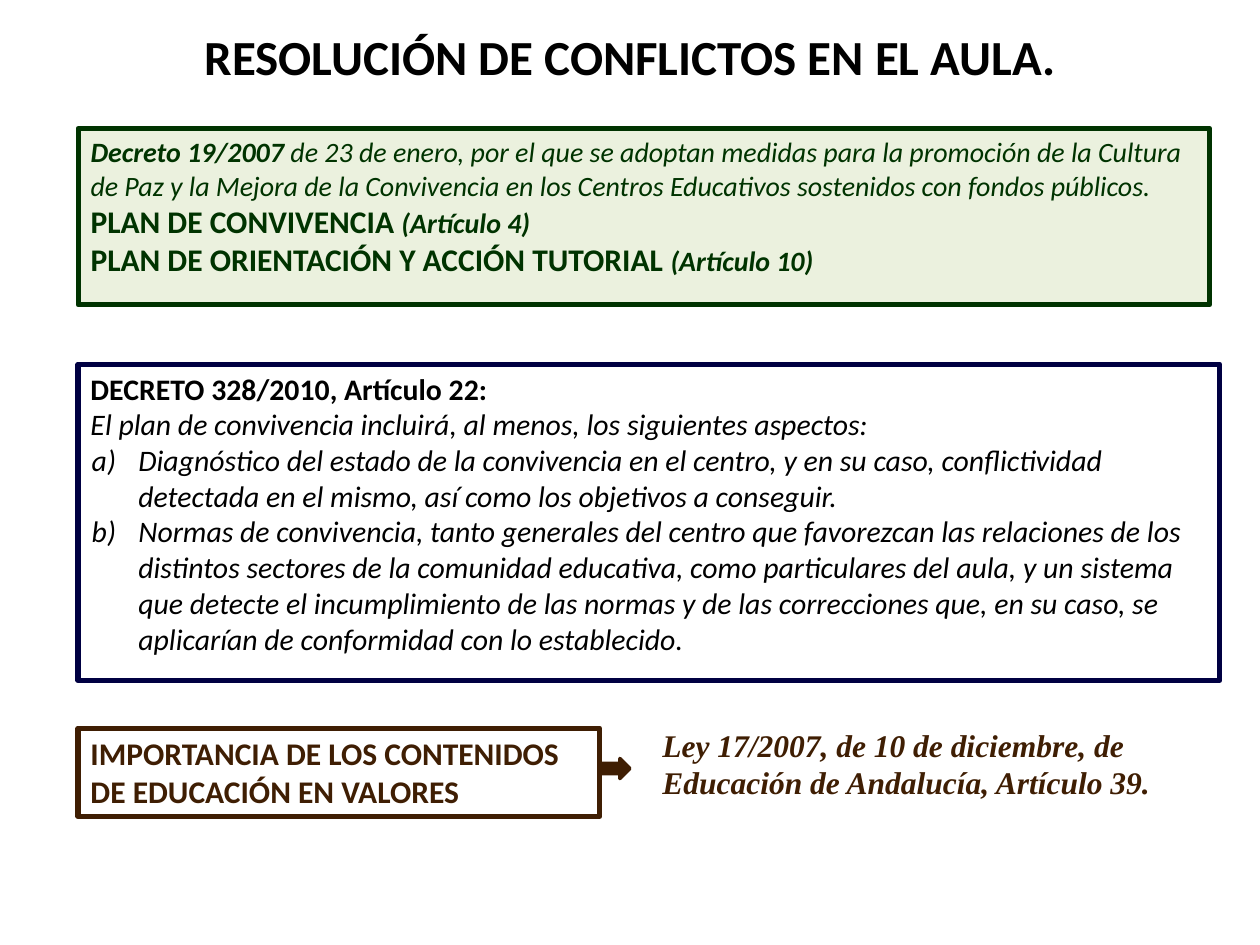
from lxml import etree
from pptx import Presentation
from pptx.dml.color import RGBColor
from pptx.enum.shapes import MSO_SHAPE
from pptx.enum.text import MSO_ANCHOR, PP_ALIGN
from pptx.oxml.ns import qn
from pptx.util import Inches, Pt

RECT, ARROW = MSO_SHAPE.RECTANGLE, MSO_SHAPE.RIGHT_ARROW
TOP, MIDDLE = MSO_ANCHOR.TOP, MSO_ANCHOR.MIDDLE
LEFT, CENTER = PP_ALIGN.LEFT, PP_ALIGN.CENTER

BLACK = RGBColor(0x00, 0x00, 0x00)
NAVY = RGBColor(0x00, 0x00, 0x42)
GREEN = RGBColor(0x00, 0x33, 0x00)
PALE = RGBColor(0xEB, 0xF1, 0xDE)
BROWN = RGBColor(0x3F, 0x1E, 0x03)

EDGE = 0.62
BOLD, ITALIC = {"bold": True}, {"italic": True}
BOTH = {**BOLD, **ITALIC}


def inches(box):
    return [Inches(n) for n in box]


def write(shape, paras, color, size, align=LEFT, anchor=TOP, face="Calibri"):
    """Fill a shape with paragraphs, each a list of (text, format) runs."""
    frame = shape.text_frame
    frame.word_wrap = True
    frame.vertical_anchor = anchor
    for i, runs in enumerate(paras):
        para = frame.add_paragraph() if i else frame.paragraphs[0]
        para.alignment = align
        for text, form in runs:
            run = para.add_run()
            run.text = text
            run.font.color.rgb = color
            look = {"name": face, "size": Pt(size), "bold": False,
                    "italic": False, **form}
            for key, value in look.items():
                setattr(run.font, key, value)
    return frame


def letter(para):
    """Number a paragraph a), b), ... with a hanging indent."""
    props = para._p.get_or_add_pPr()
    props.set("marL", str(Inches(0.38)))
    props.set("indent", str(Inches(-0.37)))
    etree.SubElement(props, qn("a:buFont"), typeface="+mj-lt")
    etree.SubElement(props, qn("a:buAutoNum"), type="alphaLcParenR")


def add_shape(slide, kind, box, line, width=3, fill=None):
    shape = slide.shapes.add_shape(kind, *inches(box))
    shape.shadow.inherit = False
    if fill is None:
        shape.fill.background()
    else:
        shape.fill.solid()
        shape.fill.fore_color.rgb = fill
    shape.line.color.rgb = line
    shape.line.width = Pt(width)
    return shape


def add_title(slide, box):
    title = slide.shapes.title
    title.left, title.top, title.width, title.height = inches(box)
    text = "RESOLUCIÓN DE CONFLICTOS EN EL AULA."
    write(title, [[(text, BOLD)]], BLACK, 28, CENTER)


def add_decree(slide, box):
    large = {**BOLD, "size": Pt(18)}
    paras = [
        [("Decreto 19/2007 ", BOTH),
         ("de 23 de enero, por el que se adoptan medidas para la promoción "
          "de la Cultura de Paz y la Mejora de la Convivencia en los Centros "
          "Educativos sostenidos con fondos públicos.", ITALIC)],
        [("PLAN DE CONVIVENCIA ", large), ("(Artículo 4)", BOTH)],
        [("PLAN DE ORIENTACIÓN Y ACCIÓN TUTORIAL ", large),
         ("(Artículo 10)", BOTH)],
    ]
    write(add_shape(slide, RECT, box, GREEN, fill=PALE), paras, GREEN, 16)


def add_plan(slide, box):
    paras = [
        [("DECRETO 328/2010, Artículo 22:", BOLD)],
        [("El plan de convivencia incluirá, al menos, los siguientes "
          "aspectos:", ITALIC)],
        [("Diagnóstico del estado de la convivencia en el centro, y en su "
          "caso, conflictividad detectada en el mismo, así como los "
          "objetivos a conseguir.", ITALIC)],
        [("Normas de convivencia, tanto generales del centro que favorezcan "
          "las relaciones de los distintos sectores de la comunidad "
          "educativa, como particulares del aula, y un sistema que detecte "
          "el incumplimiento de las normas y de las correcciones que, en su "
          "caso, se aplicarían de conformidad con lo establecido.", ITALIC)],
    ]
    frame = write(add_shape(slide, RECT, box, NAVY), paras, BLACK, 17)
    for para in frame.paragraphs[2:]:
        letter(para)


def add_values(slide, box):
    """Place the values box, its arrow and the law it points to."""
    left, top, width, height = box
    label = add_shape(slide, RECT, (left, top, 4.14, height), BROWN)
    text = "IMPORTANCIA DE LOS CONTENIDOS DE EDUCACIÓN EN VALORES"
    write(label, [[(text, BOLD)]], BROWN, 18)
    add_shape(slide, ARROW, (left + 4.15, top + 0.24, 0.23, 0.16),
              BROWN, 2, BROWN)
    law = slide.shapes.add_textbox(
        *inches((left + 4.54, top - 0.07, width - 4.54, height)))
    text = "Ley 17/2007, de 10 de diciembre, de Educación de Andalucía, Artículo 39."
    write(law, [[(text, BOTH)]], BROWN, 18, anchor=MIDDLE,
          face="Times New Roman")


def main():
    deck = Presentation()
    deck.slide_width, deck.slide_height = Inches(10), Inches(7.5)
    slide = deck.slides.add_slide(deck.slide_layouts[5])
    add_title(slide, (0, 0.16, 10, 0.57))
    add_plan(slide, (EDGE, 2.89, 9.06, 2.51))
    add_decree(slide, (EDGE, 1.02, 8.98, 1.4))
    add_values(slide, (EDGE, 5.78, 10 - EDGE, 0.7))
    deck.save("out.pptx")


if __name__ == "__main__":
    main()
